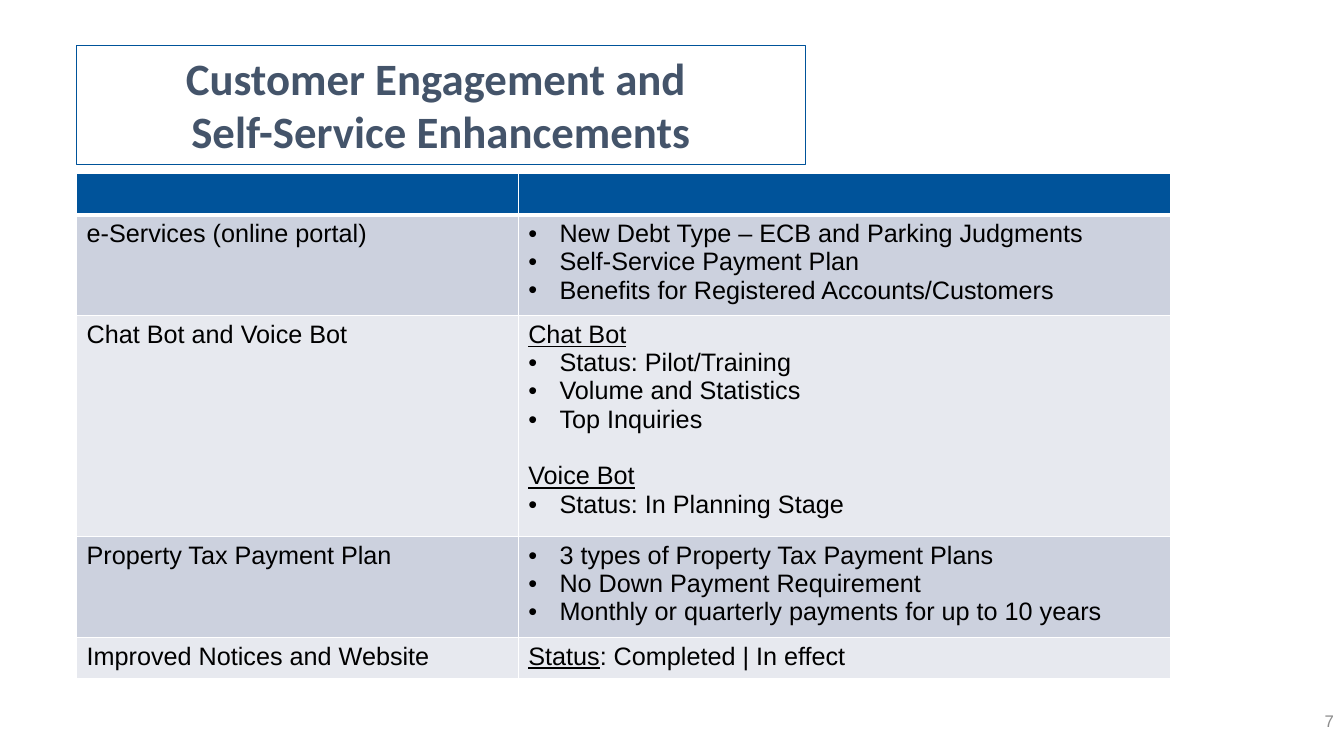
from lxml import etree
from pptx import Presentation
from pptx.dml.color import RGBColor
from pptx.enum.shapes import MSO_SHAPE
from pptx.enum.text import MSO_ANCHOR, PP_ALIGN
from pptx.oxml.ns import qn
from pptx.util import Inches, Pt

# Content: a detail line is (kind, text); "head" lines are underlined
TITLE_LINES = ["Customer Engagement and ", "Self-Service Enhancements"]
PAGE_NUMBER = "7"
INITIATIVES = [
    ("e-Services (online portal)", [
        ("bullet", "New Debt Type – ECB and Parking Judgments"),
        ("bullet", "Self-Service Payment Plan"),
        ("bullet", "Benefits for Registered Accounts/Customers"),
    ]),
    ("Chat Bot and Voice Bot", [
        ("head", "Chat Bot"),
        ("bullet", "Status: Pilot/Training"),
        ("bullet", "Volume and Statistics"),
        ("bullet", "Top Inquiries"),
        ("head", "Voice Bot"),
        ("bullet", "Status: In Planning Stage"),
    ]),
    ("Property Tax Payment Plan", [
        ("bullet", "3 types of Property Tax Payment Plans"),
        ("bullet", "No Down Payment Requirement"),
        ("bullet", "Monthly or quarterly payments for up to 10 years"),
    ]),
    ("Improved Notices and Website", [
        ("head", "Status", ": Completed | In effect"),
    ]),
]

# Layout and colours
LEFT = 0.76
COLUMN_WIDTHS = [4.38, 6.47]
ROW_HEIGHTS = [0.41, 1.0, 2.19, 1.0, 0.41]
BLUE = RGBColor(0x00, 0x53, 0x9A)
SLATE = RGBColor(0x44, 0x54, 0x6A)
GREY = RGBColor(0x8C, 0x8C, 0x8C)
WHITE = RGBColor(0xFF, 0xFF, 0xFF)
BLACK = RGBColor(0x00, 0x00, 0x00)
BANDS = [RGBColor(0xCC, 0xD1, 0xDE), RGBColor(0xE7, 0xE9, 0xEF)]


def add_text(paragraph, text, size, color, font="Arial", bold=False, underline=False):
    run = paragraph.add_run()
    run.text = text
    run.font.name = font
    run.font.size = Pt(size)
    run.font.bold = bold
    run.font.underline = underline
    run.font.color.rgb = color


def add_bullet(paragraph):
    props = paragraph._p.get_or_add_pPr()
    props.set("marL", str(Inches(0.31)))
    props.set("indent", str(-Inches(0.31)))
    etree.SubElement(props, qn("a:buFont")).set("typeface", "Arial")
    etree.SubElement(props, qn("a:buChar")).set("char", "•")


def style_cell(cell, color, top=1, bottom=1):
    props = cell._tc.get_or_add_tcPr()
    for side, width in (("L", 1), ("R", 1), ("T", top), ("B", bottom)):
        border = etree.SubElement(props, qn(f"a:ln{side}"), w=str(Pt(width)))
        fill = etree.SubElement(border, qn("a:solidFill"))
        etree.SubElement(fill, qn("a:srgbClr"), val=str(WHITE))
    cell.fill.solid()
    cell.fill.fore_color.rgb = color


def fill_details(frame, details):
    for i, (kind, text, *rest) in enumerate(details):
        paragraph = frame.add_paragraph() if i else frame.paragraphs[0]
        if kind == "bullet":
            add_bullet(paragraph)
        elif i:
            paragraph.space_before = Pt(20.5)
        add_text(paragraph, text, 18, BLACK, underline=kind == "head")
        for plain in rest:
            add_text(paragraph, plain, 18, BLACK)


prs = Presentation()
prs.slide_width, prs.slide_height = Inches(13.33), Inches(7.5)
slide = prs.slides.add_slide(prs.slide_layouts[6])

# Page number
page = slide.shapes.add_textbox(Inches(10.33), Inches(6.95), Inches(3), Inches(0.4))
page.text_frame.word_wrap = True
page.text_frame.vertical_anchor = MSO_ANCHOR.MIDDLE
page_line = page.text_frame.paragraphs[0]
page_line.alignment = PP_ALIGN.RIGHT
add_text(page_line, PAGE_NUMBER, 12, GREY)

# Title box
title = slide.shapes.add_shape(
    MSO_SHAPE.RECTANGLE, Inches(LEFT), Inches(0.45), Inches(7.23), Inches(1.18))
title.shadow.inherit = False
title.fill.solid()
title.fill.fore_color.rgb = WHITE
title.line.color.rgb = BLUE
title.line.width = Pt(1)
title.text_frame.word_wrap = True
title.text_frame.vertical_anchor = MSO_ANCHOR.TOP
heading = title.text_frame.paragraphs[0]
heading.alignment = PP_ALIGN.CENTER
for i, line in enumerate(TITLE_LINES):
    if i:
        heading.add_line_break()
    add_text(heading, line, 32, SLATE, font="Calibri", bold=True)

# Initiatives table
table = slide.shapes.add_table(
    len(ROW_HEIGHTS), len(COLUMN_WIDTHS), Inches(LEFT), Inches(1.72),
    Inches(sum(COLUMN_WIDTHS)), Inches(sum(ROW_HEIGHTS))).table
for column, width in zip(table.columns, COLUMN_WIDTHS):
    column.width = Inches(width)
for row, height in zip(table.rows, ROW_HEIGHTS):
    row.height = Inches(height)
for header in table.rows[0].cells:
    style_cell(header, BLUE, bottom=3)
for r, (initiative, details) in enumerate(INITIATIVES, start=1):
    name_cell, detail_cell = table.rows[r].cells
    for cell in (name_cell, detail_cell):
        style_cell(cell, BANDS[(r - 1) % 2], top=3 if r == 1 else 1)
    add_text(name_cell.text_frame.paragraphs[0], initiative, 18, BLACK)
    fill_details(detail_cell.text_frame, details)

prs.save("out.pptx")
